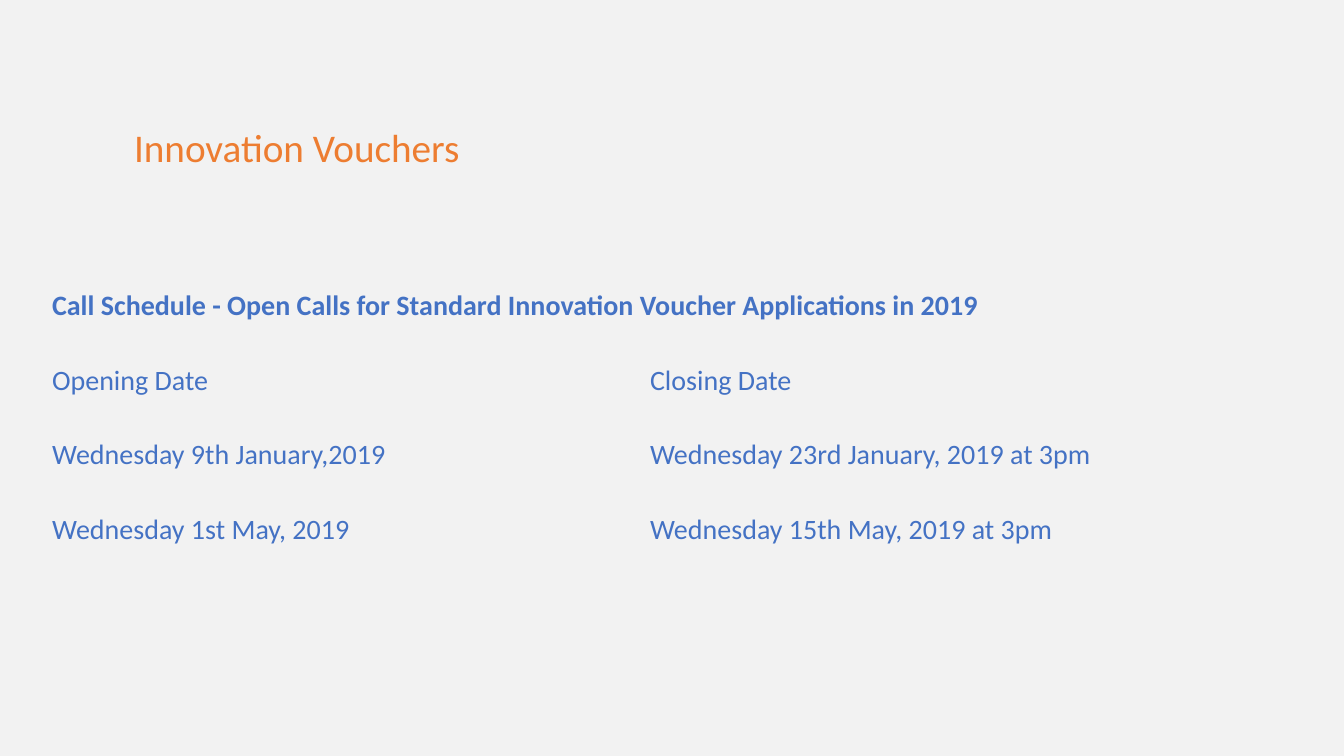
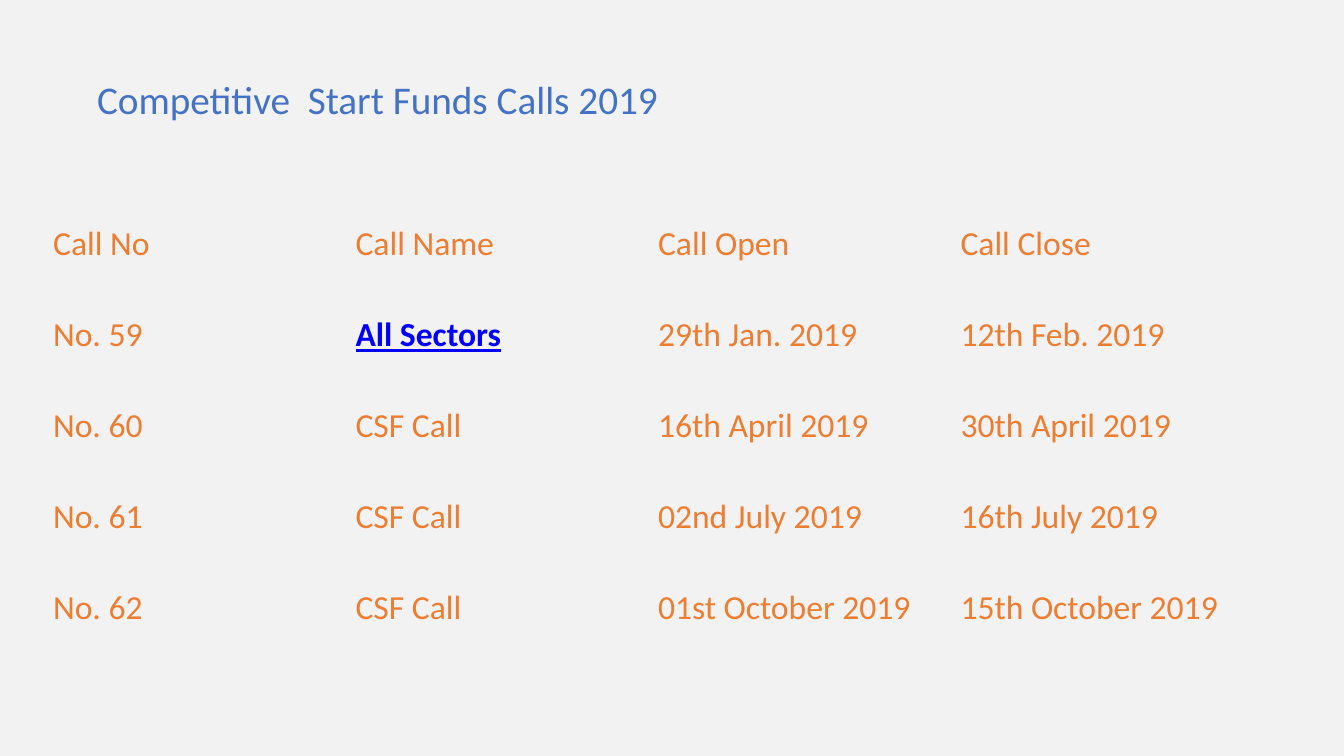
from lxml.etree import SubElement
from pptx import Presentation
from pptx.dml.color import RGBColor
from pptx.enum.text import MSO_ANCHOR, MSO_AUTO_SIZE, PP_ALIGN
from pptx.oxml.ns import qn
from pptx.util import Pt

PX = 914400 / 100.8
FONT = "Calibri"
TITLE_SIZE = 28
COLORS = {
    "background": "F2F2F2",
    "blue": "4472C4",
    "orange": "ED7D31",
    "link": "0000FF",
}

VOUCHER_HEADING = "Call Schedule - Open Calls for Standard Innovation Voucher Applications in 2019"
VOUCHER_ROWS = [
    (VOUCHER_HEADING,),
    ("Opening Date", "Closing Date"),
    ("Wednesday 9th January,2019", "Wednesday 23rd January, 2019 at 3pm"),
    ("Wednesday 1st May, 2019", "Wednesday 15th May, 2019 at 3pm"),
]
SECTORS = "All Sectors"
FUND_ROWS = [
    ("Call No", "Call Name", "Call Open", "Call Close"),
    ("No. 59", SECTORS, "29th Jan. 2019", "12th Feb. 2019"),
    ("No. 60", "CSF Call", "16th April 2019", "30th April 2019"),
    ("No. 61", "CSF Call", "02nd July 2019", "16th July 2019"),
    ("No. 62", "CSF Call", "01st October 2019", "15th October 2019"),
]


def px(n):
    return round(n * PX)


def rgb(name):
    return RGBColor.from_string(COLORS[name])


def add_run(p, text, size, color, bold=False, underline=False):
    r = p.add_run()
    r.text = text
    r.font.name = FONT
    r.font.size = Pt(size)
    r.font.color.rgb = rgb(color)
    r.font.bold = bold
    r.font.underline = underline


def add_titled_slide(prs, title, box, color):
    s = prs.slides.add_slide(prs.slide_layouts[5])
    sp = s.shapes.title
    sp.left, sp.top, sp.width, sp.height = map(px, box)
    tf = sp.text_frame
    tf.word_wrap = True
    tf.auto_size = MSO_AUTO_SIZE.NONE
    tf.vertical_anchor = MSO_ANCHOR.TOP
    p = tf.paragraphs[0]
    p.alignment = PP_ALIGN.LEFT
    add_run(p, title, TITLE_SIZE, color)
    return s


def clear_cell(cell):
    """Leave the cell without borders or fill."""
    tc_pr = cell._tc.get_or_add_tcPr()
    for side in ("a:lnL", "a:lnR", "a:lnT", "a:lnB"):
        SubElement(SubElement(tc_pr, qn(side)), qn("a:noFill"))
    cell.fill.background()


def add_schedule(s, rows, box, col_widths, size, color, styles):
    """Add a plain table; a row with one text spans it, and styles holds runs that differ."""
    left, top, width, height = map(px, box)
    table = s.shapes.add_table(len(rows), len(col_widths), left, top, width, height).table
    table.first_row = table.horz_banding = False
    for column, col_width in zip(table.columns, col_widths):
        column.width = px(col_width)
    for i, texts in enumerate(rows):
        table.rows[i].height = height // len(rows)
        for cell in table.rows[i].cells:
            clear_cell(cell)
            cell.vertical_anchor = MSO_ANCHOR.MIDDLE
        if len(texts) == 1:
            table.cell(i, 0).merge(table.cell(i, len(col_widths) - 1))
        for j, text in enumerate(texts):
            style = {"size": size, "color": color, **styles.get(text, {})}
            add_run(table.cell(i, j).text_frame.paragraphs[0], text, **style)


def add_voucher_slide(prs):
    s = add_titled_slide(prs, "Innovation Vouchers", (124, 118, 393, 57), "orange")
    add_schedule(s, VOUCHER_ROWS, (42, 269, 1203, 298), (598, 605), 20, "blue",
                 {VOUCHER_HEADING: {"bold": True}})


def add_fund_slide(prs):
    s = add_titled_slide(prs, "Competitive  Start Funds Calls 2019", (87, 70, 590, 57), "blue")
    width = 1210
    add_schedule(s, FUND_ROWS, (43, 199, width, 455), [width / 4] * 4, 24, "orange",
                 {SECTORS: {"color": "link", "bold": True, "underline": True}})


def main():
    prs = Presentation()
    prs.slide_width, prs.slide_height = px(1344), px(756)
    fill = prs.slide_master.background.fill
    fill.solid()
    fill.fore_color.rgb = rgb("background")
    add_voucher_slide(prs)
    add_fund_slide(prs)
    prs.save("out.pptx")


if __name__ == "__main__":
    main()
